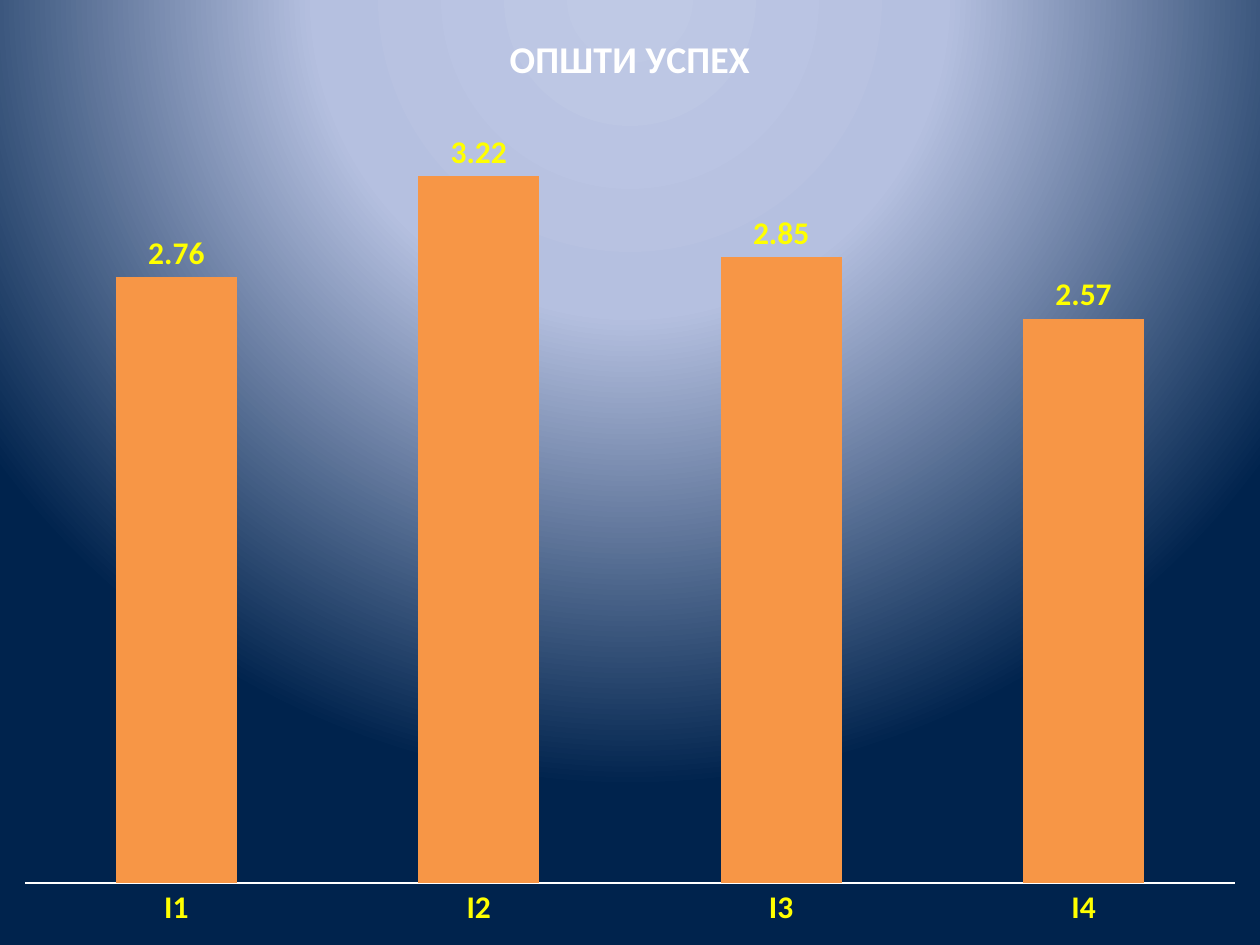
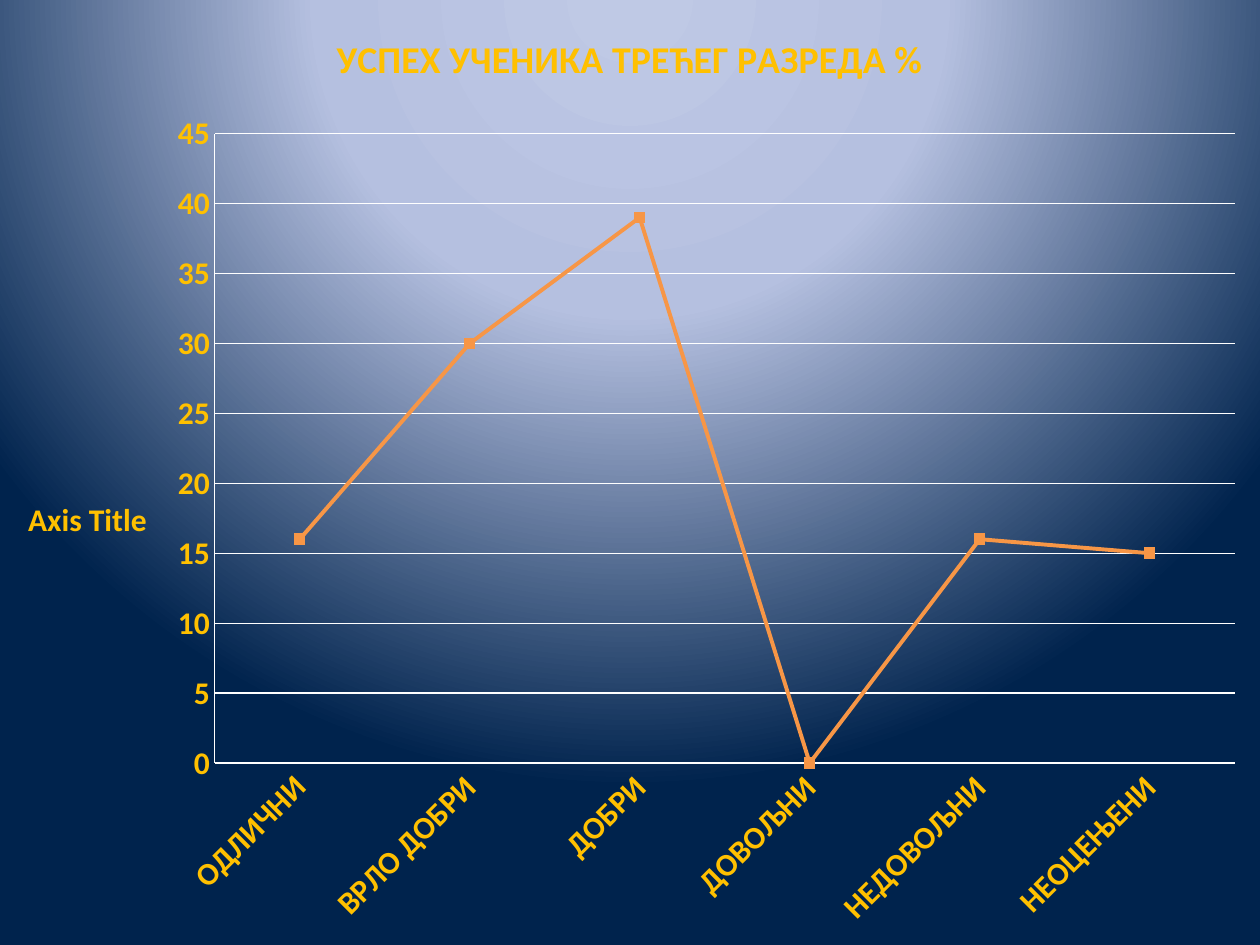
from pptx import Presentation
from pptx.chart.data import CategoryChartData
from pptx.dml.color import RGBColor
from pptx.enum.chart import XL_CHART_TYPE, XL_LABEL_POSITION, XL_MARKER_STYLE, XL_TICK_MARK
from pptx.oxml import parse_xml
from pptx.oxml.ns import nsdecls, qn
from pptx.util import Inches, Pt

WIDTH, HEIGHT = 10, 7.5
FONT = "Calibri"
WHITE, YELLOW, GOLD, ORANGE = "FFFFFF", "FFFF00", "FFC000", "F79646"
GLOW_STOPS = [(0, "BFC9E5"), (40, "B5C0E0"), (100, "00234D")]
GLOW_CENTRE = {"l": 50, "t": -80, "r": 50, "b": 180}

OVERALL = {
    "type": XL_CHART_TYPE.COLUMN_CLUSTERED,
    "title": "ОПШТИ УСПЕХ",
    "title_color": WHITE,
    "text_color": YELLOW,
    "values": {"I1": 2.76, "I2": 3.22, "I3": 2.85, "I4": 2.57},
}
THIRD_GRADE = {
    "type": XL_CHART_TYPE.LINE_MARKERS_STACKED,
    "title": "УСПЕХ УЧЕНИКА ТРЕЋЕГ РАЗРЕДА %",
    "title_color": GOLD,
    "text_color": GOLD,
    "values": {"ОДЛИЧНИ": 16, "ВРЛО ДОБРИ": 30, "ДОБРИ": 39,
               "ДОВОЉНИ": 0, "НЕДОВОЉНИ": 16, "НЕОЦЕЊЕНИ": 15},
}
AXIS_TITLE = "Axis Title"


def rgb(color):
    return RGBColor.from_string(color)


def style_font(font, color, size=18):
    for name, value in {"name": FONT, "size": Pt(size), "bold": True}.items():
        setattr(font, name, value)
    font.color.rgb = rgb(color)


def style_line(line, color, width):
    line.color.rgb = rgb(color)
    line.width = Pt(width)


def set_title(owner, text, color, size):
    """Title a chart or an axis."""
    frame = (owner.chart_title if hasattr(owner, "chart_title") else owner.axis_title).text_frame
    frame.text = text
    style_font(frame.paragraphs[0].runs[0].font, color, size)
    return frame


def add_glow(master):
    """Give every slide the radial gradient centred above the top edge."""
    stops = "".join(f'<a:gs pos="{position * 1000}"><a:srgbClr val="{color}"/></a:gs>'
                    for position, color in GLOW_STOPS)
    centre = " ".join(f'{side}="{percent * 1000}"' for side, percent in GLOW_CENTRE.items())
    master.background.fill.solid()
    solid = master.element.find(".//" + qn("p:bgPr")).find(qn("a:solidFill"))
    solid.getparent().replace(solid, parse_xml(
        f'<a:gradFill {nsdecls("a")} rotWithShape="1"><a:gsLst>{stops}</a:gsLst>'
        f'<a:path path="circle"><a:fillToRect {centre}/></a:path></a:gradFill>'))


def add_chart_slide(presentation, content):
    """Add a slide filled by one titled chart with a plain category axis."""
    slide = presentation.slides.add_slide(presentation.slide_layouts[6])
    data = CategoryChartData()
    data.categories = content["values"].keys()
    data.add_series("Series 1", content["values"].values())
    chart = slide.shapes.add_chart(
        content["type"], 0, 0, Inches(WIDTH), Inches(HEIGHT), data).chart
    chart.has_legend = False
    style_font(chart.font, content["text_color"])
    set_title(chart, content["title"], content["title_color"], 21.6)
    for axis in (chart.category_axis, chart.value_axis):
        axis.major_tick_mark = axis.minor_tick_mark = XL_TICK_MARK.NONE
        style_line(axis.format.line, WHITE, 0.75)
        style_font(axis.tick_labels.font, content["text_color"])
    chart.plots[0].vary_by_categories = False
    return chart


def add_overall_slide(presentation):
    chart = add_chart_slide(presentation, OVERALL)
    chart.value_axis.visible = False
    chart.value_axis.has_major_gridlines = False
    plot = chart.plots[0]
    plot.gap_width = 150
    fill = plot.series[0].format.fill
    fill.solid()
    fill.fore_color.rgb = rgb(ORANGE)
    labels = plot.series[0].data_labels
    labels.show_value = True
    labels.position = XL_LABEL_POSITION.OUTSIDE_END
    style_font(labels.font, YELLOW)


def add_third_grade_slide(presentation):
    chart = add_chart_slide(presentation, THIRD_GRADE)
    style_line(chart.value_axis.major_gridlines.format.line, WHITE, 0.75)
    frame = set_title(chart.value_axis, AXIS_TITLE, GOLD, 18)
    for text, rotation in ((frame._txBody, 0),
                           (chart.category_axis._element.find(qn("c:txPr")), -45)):
        body = text.find(qn("a:bodyPr"))
        body.set("rot", str(rotation * 60000))
        body.set("vert", "horz")
    series = chart.plots[0].series[0]
    series.smooth = False
    style_line(series.format.line, ORANGE, 2.25)
    marker = series.marker
    marker.style = XL_MARKER_STYLE.SQUARE
    marker.size = 6
    marker.format.fill.solid()
    marker.format.fill.fore_color.rgb = rgb(ORANGE)
    marker.format.line.color.rgb = rgb(ORANGE)


def main():
    presentation = Presentation()
    presentation.slide_width = Inches(WIDTH)
    presentation.slide_height = Inches(HEIGHT)
    add_glow(presentation.slide_master)
    add_overall_slide(presentation)
    add_third_grade_slide(presentation)
    presentation.save("out.pptx")


if __name__ == "__main__":
    main()
